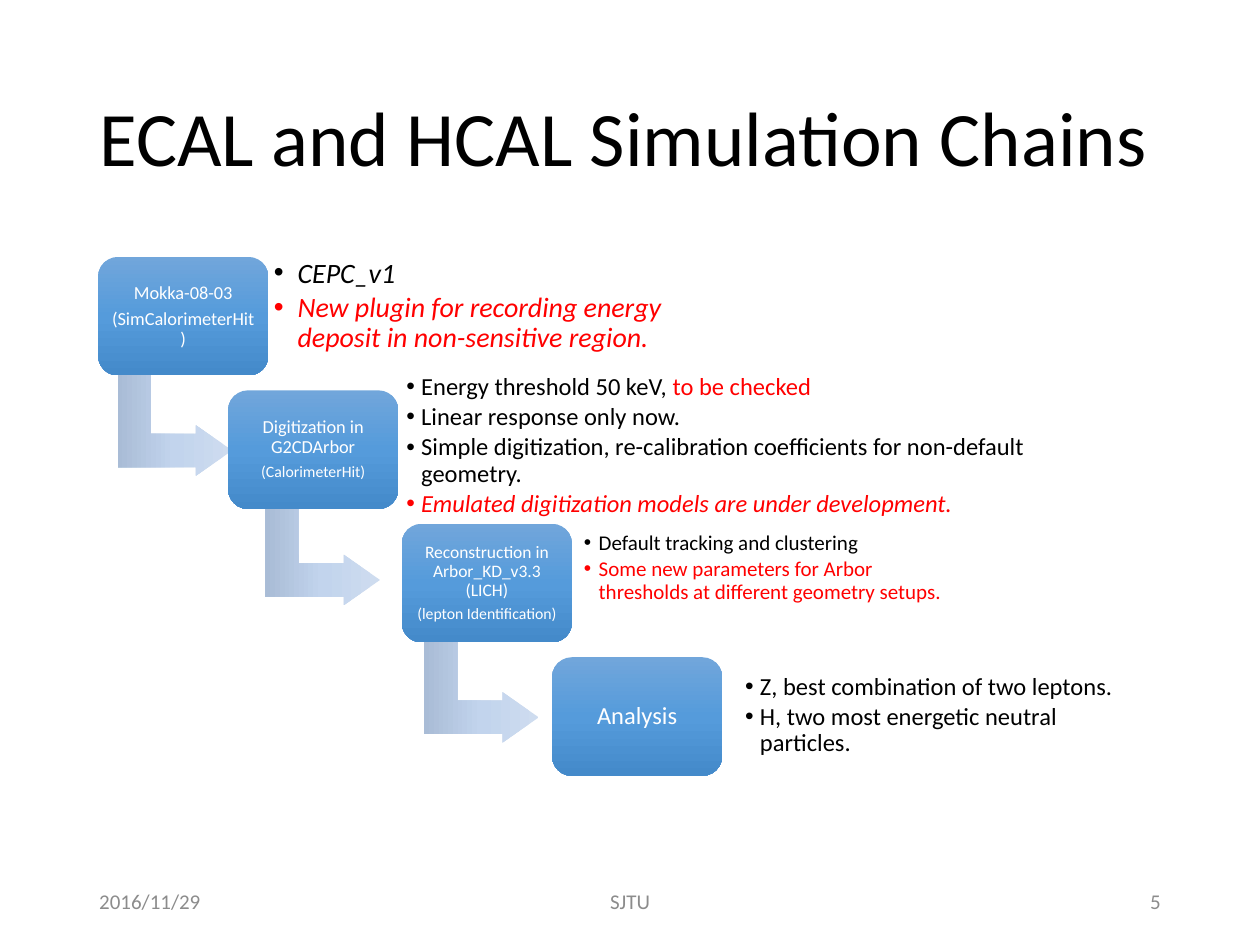
from copy import deepcopy

from lxml import etree
from pptx import Presentation, util as u
from pptx.dml.color import RGBColor
from pptx.enum import shapes, text
from pptx.oxml import ns

BLACK = RGBColor(0x00, 0x00, 0x00)
WHITE = RGBColor(0xFF, 0xFF, 0xFF)
RED = RGBColor(0xFF, 0x00, 0x00)
GREY = RGBColor(0x8C, 0x8C, 0x8C)
BOX_SHADES = [RGBColor(0x71, 0xA6, 0xDB), RGBColor(0x55, 0x9B, 0xDB), RGBColor(0x44, 0x8A, 0xCA)]
ARROW_SHADES = [RGBColor(0xCE, 0xDC, 0xEF), RGBColor(0xC2, 0xD4, 0xED), RGBColor(0xA9, 0xBC, 0xD6)]

BOX_LEFTS = [1.98, 4.6, 8.1, 11.13]
BOX_TOP, BOX_STEP = 5.18, 2.69
ARROWS = [(2.51, 7.42), (5.49, 10.03), (8.69, 12.8)]

STAGES = [
    [("Mokka-08-03", 10.5), ("(SimCalorimeterHit)", 10.5)],
    [("Digitization in G2CDArbor", 10.5), ("(CalorimeterHit)", 9)],
    [("Reconstruction in Arbor_KD_v3.3 (LICH)", 10), ("(lepton Identification)", 9)],
    [("Analysis", 14)],
]
NOTES = [
    ((5.36, 5.21, 9.75, 1.93), 16, 0.48, [
        [("CEPC_v1", BLACK, True)],
        [("New plugin for recording energy deposit in non-sensitive region.", RED, True)],
    ]),
    ((8.03, 7.8, 13.87, 2.39), 14, 0.3, [
        [("Energy threshold 50 keV, ", BLACK, False), ("to be checked", RED, False)],
        [("Linear response only now.", BLACK, False)],
        [("Simple digitization, re-calibration coefficients for non-default geometry.", BLACK, False)],
        [("Emulated digitization models are under development.", RED, True)],
    ]),
    ((11.61, 10.49, 7.98, 1.93), 12, 0.3, [
        [("Default tracking and clustering", BLACK, False)],
        [("Some new parameters for Arbor thresholds at different geometry setups.", RED, False)],
    ]),
    ((14.86, 13.46, 8.13, 1.93), 14, 0.3, [
        [("Z, best combination of two leptons.", BLACK, False)],
        [("H, two most energetic neutral particles.", BLACK, False)],
    ]),
]
FOOTERS = [
    (1.75, 5.72, "2016/11/29", text.PP_ALIGN.LEFT),
    (8.41, 8.59, "SJTU", text.PP_ALIGN.CENTER),
    (17.93, 5.72, "5", text.PP_ALIGN.RIGHT),
]


class ChainSlide:
    """Draws the parts of a process chain on one slide in a shared style."""

    def __init__(self, page, font="Calibri"):
        self.page = page
        self.font = font

    def style(self, font, size, colour, italic=False):
        font.name, font.size, font.bold, font.italic = self.font, u.Pt(size), False, italic
        font.color.rgb = colour

    def place(self, shape, left, top, width, height):
        shape.left, shape.top = u.Cm(left), u.Cm(top)
        shape.width, shape.height = u.Cm(width), u.Cm(height)

    def frame(self, shape, inset=None):
        frame = shape.text_frame
        frame.word_wrap = True
        frame.auto_size = text.MSO_AUTO_SIZE.NONE
        frame.vertical_anchor = text.MSO_ANCHOR.MIDDLE
        if inset is not None:
            frame.margin_left = frame.margin_right = u.Cm(inset)
            frame.margin_top = frame.margin_bottom = u.Cm(inset)
        return frame

    def paragraphs(self, frame, items):
        for index, item in enumerate(items):
            para = frame.add_paragraph() if index else frame.paragraphs[0]
            para.line_spacing = 0.9
            para.space_before = u.Pt(0)
            yield para, item

    def shaded(self, kind, area, shades):
        shape = self.page.shapes.add_shape(kind, *map(u.Cm, area))
        shape.shadow.inherit = False
        shape.line.fill.background()
        shape.fill.gradient()
        shape.fill.gradient_angle = 270
        stops = shape._element.spPr.find(".//" + ns.qn("a:gsLst"))
        stops.append(deepcopy(stops[-1]))
        for stop, position, shade in zip(shape.fill.gradient_stops, (0, 0.5, 1), shades):
            stop.position = position
            stop.color.rgb = shade
        return shape

    def title(self, wording):
        shape = self.page.shapes.title
        self.place(shape, 1.75, 1.02, 21.89, 3.68)
        for para, item in self.paragraphs(self.frame(shape), [wording]):
            para.text = item
            para.alignment = text.PP_ALIGN.LEFT
            self.style(para.font, 44, BLACK)

    def arrow(self, left, top):
        shape = self.shaded(shapes.MSO_SHAPE.BENT_UP_ARROW, (left, top, 2.03, 2.31), ARROW_SHADES)
        shape.rotation = 90
        for index, value in enumerate((0.33, 0.25, 0.36)):
            shape.adjustments[index] = value

    def box(self, left, top, lines):
        shape = self.shaded(shapes.MSO_SHAPE.ROUNDED_RECTANGLE, (left, top, 3.43, 2.39), BOX_SHADES)
        for para, (wording, size) in self.paragraphs(self.frame(shape, 0.12), lines):
            para.text = wording
            para.alignment = text.PP_ALIGN.CENTER
            para.space_after = u.Pt(round(size * 0.35, 1))
            self.style(para.font, size, WHITE)

    def bullets(self, holder, area, size, indent, items):
        self.place(holder, *area)
        for para, spans in self.paragraphs(self.frame(holder, 0.16), items):
            para.alignment = text.PP_ALIGN.LEFT
            para.space_after = u.Pt(round(size * 0.15, 1))
            props = para._p.get_or_add_pPr()
            props.set("marL", str(u.Cm(indent)))
            props.set("indent", str(-u.Cm(indent)))
            etree.SubElement(props, ns.qn("a:buFont"), typeface="Arial")
            etree.SubElement(props, ns.qn("a:buChar"), char="•")
            for wording, colour, italic in spans:
                span = para.add_run()
                span.text = wording
                font = para.font if len(spans) == 1 else span.font
                self.style(font, size, colour, italic)

    def footer(self, left, width, wording, alignment):
        shape = self.page.shapes.add_textbox(u.Cm(left), u.Cm(17.65), u.Cm(width), u.Cm(1.02))
        para = self.frame(shape).paragraphs[0]
        para.text = wording
        para.alignment = alignment
        self.style(para.font, 12, GREY)


def main():
    deck = Presentation()
    deck.slide_width, deck.slide_height = u.Cm(25.4), u.Cm(19.05)
    page = deck.slides.add_slide(deck.slide_layouts.get_by_name("Comparison"))
    chain = ChainSlide(page)
    chain.title("ECAL and HCAL Simulation Chains")
    for area in ARROWS:
        chain.arrow(*area)
    for index, (left, lines) in enumerate(zip(BOX_LEFTS, STAGES)):
        chain.box(left, BOX_TOP + index * BOX_STEP, lines)
    for holder, note in zip(list(page.placeholders)[1:], NOTES):
        chain.bullets(holder, *note)
    for footer in FOOTERS:
        chain.footer(*footer)
    deck.save("out.pptx")


if __name__ == "__main__":
    main()
